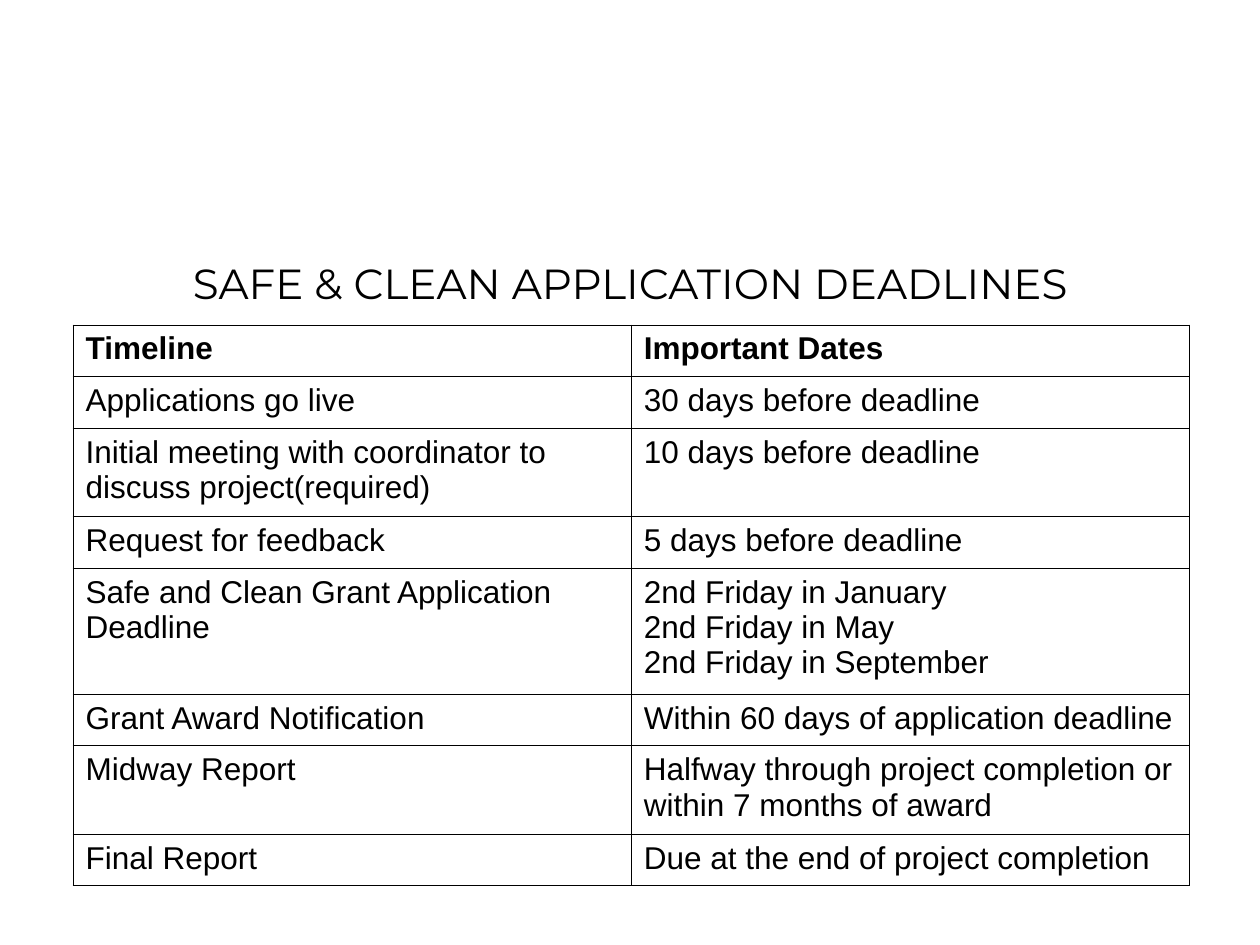
from lxml import etree
from pptx import Presentation
from pptx.dml.color import RGBColor
from pptx.enum.text import MSO_ANCHOR, PP_ALIGN
from pptx.oxml.ns import qn
from pptx.util import Inches, Pt

CENTER, LEFT = PP_ALIGN.CENTER, PP_ALIGN.LEFT
MIDDLE = MSO_ANCHOR.MIDDLE
BLACK = RGBColor(0, 0, 0)

SLIDE_WIDTH, SLIDE_HEIGHT = 10, 7.5
COLUMN_WIDTH, ROW_HEIGHT = 4.43, 0.41
TABLE_LEFT, TABLE_TOP = 0.58, 2.58
TITLE_WIDTH, TITLE_HEIGHT = 8.72, 0.67

TIMELINE = [
    ("Timeline", "Important Dates"),
    ("Applications go live", "30 days before deadline"),
    ("Initial meeting with coordinator to discuss project(required)",
     "10 days before deadline"),
    ("Request for feedback", "5 days before deadline"),
    ("Safe and Clean Grant Application Deadline",
     "2nd Friday in January\n2nd Friday in May\n2nd Friday in September"),
    ("Grant Award Notification", "Within 60 days of application deadline"),
    ("Midway Report",
     "Halfway through project completion or within 7 months of award"),
    ("Final Report", "Due at the end of project completion"),
]


def write_text(text_frame, text, *, font="Arial", size=18, bold=False, align=LEFT):
    text_frame.text = text
    text_frame.word_wrap = True
    for paragraph in text_frame.paragraphs:
        paragraph.alignment = align
        for run in paragraph.runs:
            run.font.name = font
            run.font.size = Pt(size)
            run.font.bold = bold
            run.font.color.rgb = BLACK


def add_borders(cell, color=BLACK, width=0.75):
    properties = cell._tc.get_or_add_tcPr()
    for position, side in enumerate(("a:lnL", "a:lnR", "a:lnT", "a:lnB")):
        line = etree.Element(qn(side), w=str(Pt(width)))
        fill = etree.SubElement(line, qn("a:solidFill"))
        etree.SubElement(fill, qn("a:srgbClr"), val=str(color))
        properties.insert(position, line)


presentation = Presentation()
presentation.slide_width = Inches(SLIDE_WIDTH)
presentation.slide_height = Inches(SLIDE_HEIGHT)
slide = presentation.slides.add_slide(presentation.slide_layouts[6])

title = slide.shapes.add_textbox(
    Inches((SLIDE_WIDTH - TITLE_WIDTH) / 2), Inches(TABLE_TOP - TITLE_HEIGHT),
    Inches(TITLE_WIDTH), Inches(TITLE_HEIGHT))
title.text_frame.vertical_anchor = MIDDLE
write_text(title.text_frame, "SAFE & CLEAN APPLICATION DEADLINES",
           font="Montserrat", size=24, align=CENTER)

table = slide.shapes.add_table(
    len(TIMELINE), 2, Inches(TABLE_LEFT), Inches(TABLE_TOP),
    Inches(2 * COLUMN_WIDTH), Inches(len(TIMELINE) * ROW_HEIGHT)).table
table.first_row = False
table.horz_banding = False

for row_index, row in enumerate(TIMELINE):
    for column_index, text in enumerate(row):
        cell = table.cell(row_index, column_index)
        cell.fill.background()
        add_borders(cell)
        write_text(cell.text_frame, text, bold=row_index == 0)

presentation.save("out.pptx")
